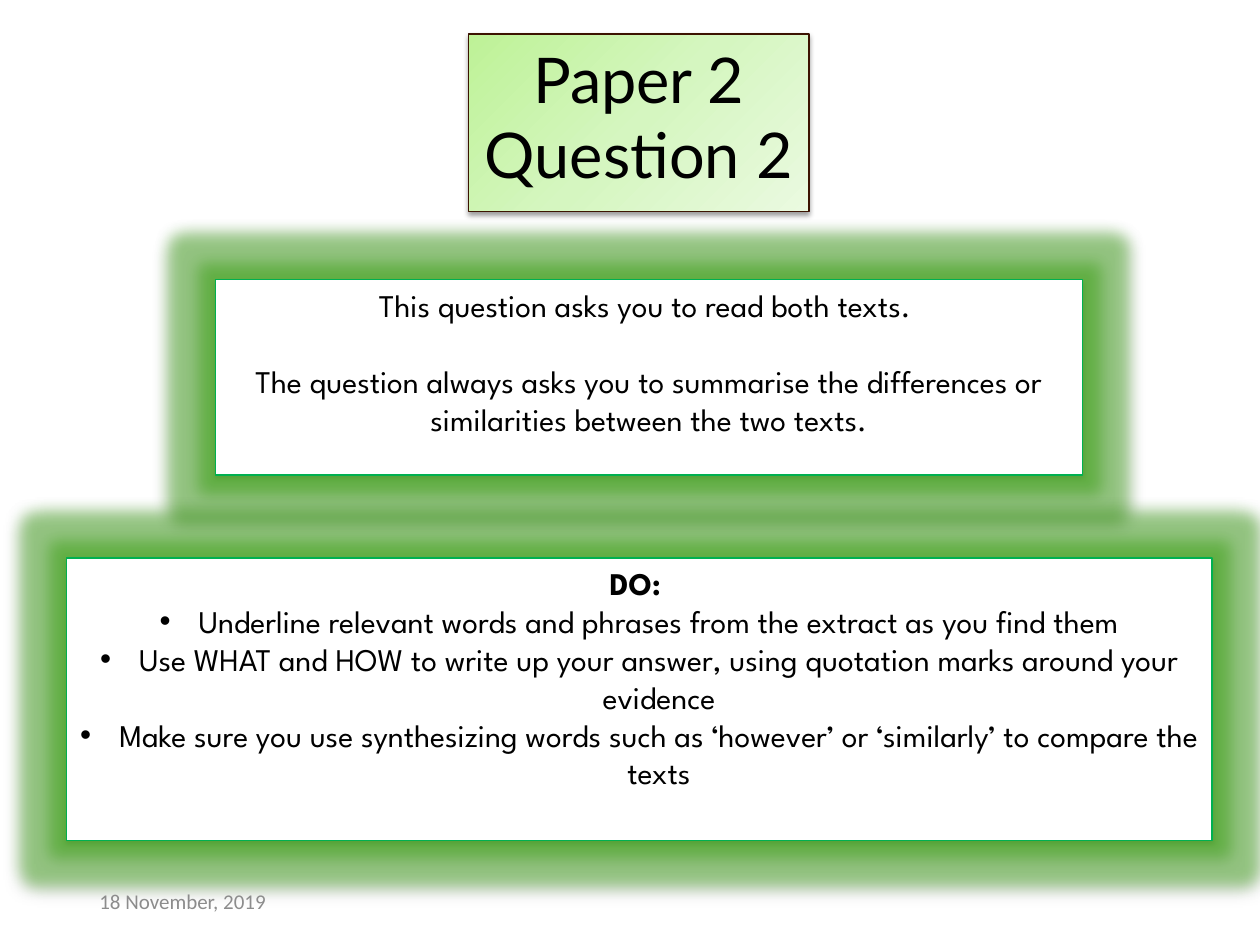
from lxml import etree
from pptx import Presentation
from pptx import util as u
from pptx.dml import color
from pptx.enum import shapes, text
from pptx.oxml import ns

WIDTH, HEIGHT = 10, 7.5
BLACK, WHITE, GREEN, BROWN = "000000", "FFFFFF", "00B050", "3C1301"
GLOW, GREY = "2EA600", "8C8C8C"
TITLE_STOPS = ((0, "BEF297"), (50, "D5F6C0"), (100, "EAFAE0"))
BODY_FONT = "League Spartan"


def rgb(value):
    return color.RGBColor.from_string(value)


def place(box, area):
    box.left, box.top, box.width, box.height = map(u.Inches, area)


def add_node(parent, tag, **attributes):
    values = {name: str(value) for name, value in attributes.items()}
    return etree.SubElement(parent, ns.qn(tag), values)


def add_color(parent, value, alpha=100):
    node = add_node(parent, "a:srgbClr", val=value)
    if alpha < 100:
        add_node(node, "a:alpha", val=alpha * 1000)


def set_line(box, value):
    box.line.color.rgb = rgb(value)
    box.line.width = u.Pt(0.75)


def add_effects(box, glow=False):
    box.shadow.inherit = False
    effects = box._element.spPr.find(ns.qn("a:effectLst"))
    if glow:
        halo = add_node(effects, "a:glow", rad=u.Pt(18))
        add_color(halo, GLOW, 40)
    shadow = add_node(effects, "a:outerShdw", blurRad=u.Pt(3.1), dist=u.Pt(1.6),
                      dir=90 * 60000, rotWithShape=0)
    add_color(shadow, BLACK, 38)


def set_gradient(box, gradient_stops):
    box.fill.gradient()
    box.fill.gradient_angle = 315
    stops = box._element.spPr.find(ns.qn("a:gradFill")).find(ns.qn("a:gsLst"))
    for stop in list(stops):
        stops.remove(stop)
    for position, value in gradient_stops:
        add_color(add_node(stops, "a:gs", pos=position * 1000), value)


def write(box, lines, size, font, value, align, anchor):
    frame = box.text_frame
    frame.text = "\n".join(lines)
    frame.word_wrap = True
    frame.auto_size = text.MSO_AUTO_SIZE.NONE
    frame.vertical_anchor = anchor
    for para in frame.paragraphs:
        para.alignment = align
        for span in para.runs:
            span.font.size = u.Pt(size)
            span.font.name = font
            span.font.color.rgb = rgb(value)
    return frame.paragraphs


def add_bullet(para):
    properties = para._p.get_or_add_pPr()
    properties.set("marL", str(u.Inches(0.31)))
    properties.set("indent", str(-u.Inches(0.31)))
    add_node(properties, "a:buFont", typeface="Arial")
    add_node(properties, "a:buChar", char="•")


def build_title(page, area):
    title = page.shapes.title
    place(title, area)
    set_gradient(title, TITLE_STOPS)
    set_line(title, BROWN)
    add_effects(title)
    write(title, ["Paper 2", "Question 2"], 36, "Lato", BLACK,
          text.PP_ALIGN.CENTER, text.MSO_ANCHOR.TOP)


def build_panel(page, area, lines):
    panel = page.shapes.add_shape(shapes.MSO_SHAPE.RECTANGLE, 0, 0, 0, 0)
    place(panel, area)
    panel.fill.solid()
    panel.fill.fore_color.rgb = rgb(WHITE)
    set_line(panel, GREEN)
    add_effects(panel, glow=True)
    return write(panel, lines, 18, BODY_FONT, BLACK,
                 text.PP_ALIGN.CENTER, text.MSO_ANCHOR.TOP)


def build_question(page, area):
    paras = build_panel(page, area, [
        "This question asks you to read both texts. ",
        "The question always asks you to summarise the differences or "
        "similarities between the two texts.",
    ])
    paras[1].space_before = u.Pt(21.7)


def build_advice(page, area):
    heading, *tips = build_panel(page, area, [
        "DO: ",
        "Underline relevant words and phrases from the extract as you find them",
        "Use WHAT and HOW to write up your answer, using quotation marks "
        "around your evidence",
        "Make sure you use synthesizing words such as ‘however’ or ‘similarly’ "
        "to compare the texts",
    ])
    heading.runs[0].font.bold = True
    for tip in tips:
        add_bullet(tip)


def build_date(page, area):
    box = page.shapes.add_textbox(0, 0, 0, 0)
    place(box, area)
    write(box, ["18 November, 2019"], 12, "Calibri", GREY,
          text.PP_ALIGN.LEFT, text.MSO_ANCHOR.MIDDLE)


def main():
    deck = Presentation()
    deck.slide_width, deck.slide_height = u.Inches(WIDTH), u.Inches(HEIGHT)
    page = deck.slides.add_slide(deck.slide_layouts[5])
    build_title(page, (3.72, 0.27, 2.7, 1.41))
    build_question(page, (1.71, 2.22, 6.88, 1.55))
    build_advice(page, (0.53, 4.43, 9.09, 2.24))
    build_date(page, (0.69, 6.95, 2.25, 0.4))
    deck.save("out.pptx")


if __name__ == "__main__":
    main()
